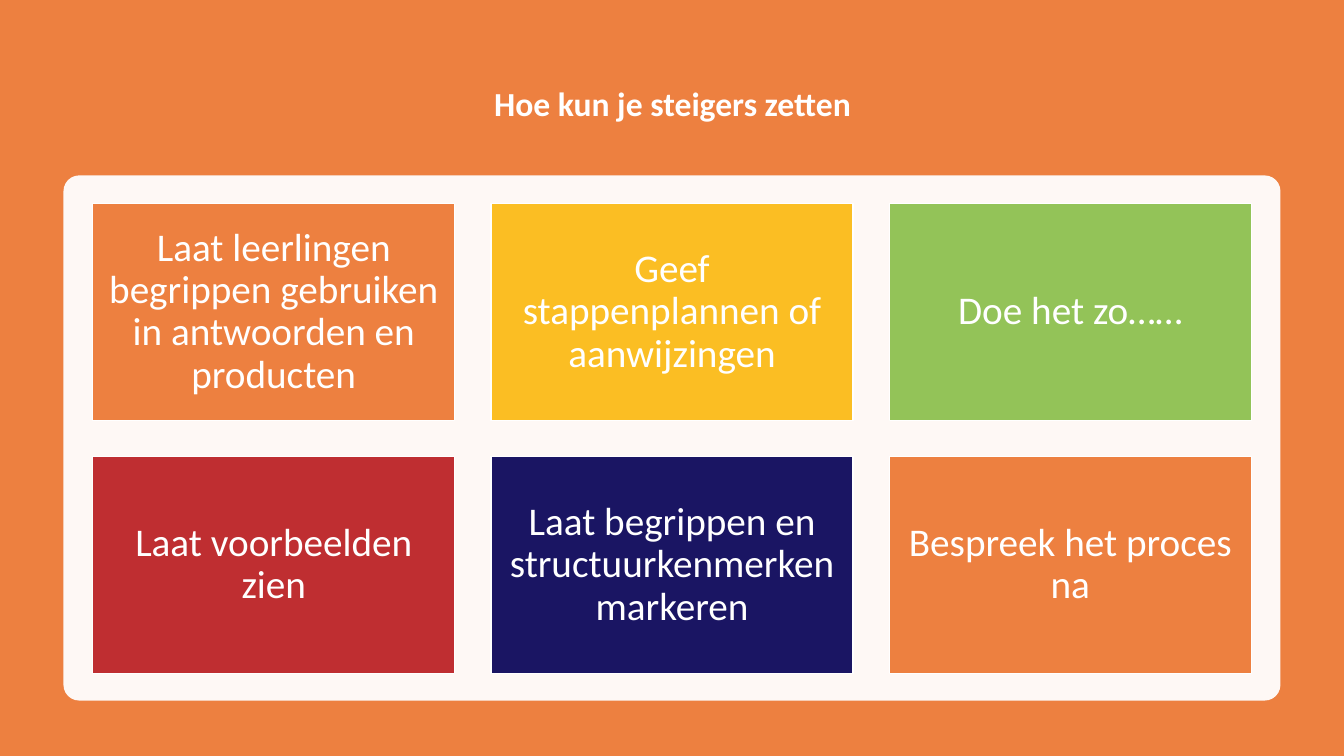
from dataclasses import dataclass

from lxml.etree import SubElement
from pptx import Presentation
from pptx.dml.color import RGBColor
from pptx.enum.shapes import MSO_SHAPE as Preset
from pptx.enum.text import MSO_ANCHOR as Anchor, PP_ALIGN as Align
from pptx.oxml.ns import qn
from pptx.util import Inches, Pt


@dataclass(frozen=True)
class Theme:
    font: str = "Calibri"
    title_size: int = 24
    card_size: int = 28
    white: str = "FFFFFF"
    orange: str = "ED8040"
    yellow: str = "FBBE23"
    green: str = "93C358"
    red: str = "BF2E31"
    navy: str = "1A1563"


THEME = Theme()
SLIDE_SIZE = (13.33, 7.5)
TITLE = "Hoe kun je steigers zetten"
CARDS = [
    ("Laat leerlingen begrippen gebruiken in antwoorden en producten", THEME.orange),
    ("Geef stappenplannen of aanwijzingen", THEME.yellow),
    ("Doe het zo……", THEME.green),
    ("Laat voorbeelden zien", THEME.red),
    ("Laat begrippen en structuurkenmerken markeren", THEME.navy),
    ("Bespreek het proces na", THEME.orange),
]
COLUMNS = 3
GRID_LEFT, GRID_TOP = 0.92, 2.02
CARD_WIDTH, CARD_HEIGHT = 3.59, 2.15
GAP = 0.36


def add_block(slide, preset, box, color, line=None):
    shape = slide.shapes.add_shape(preset, *map(Inches, box))
    shape.shadow.inherit = False
    shape.fill.solid()
    shape.fill.fore_color.rgb = RGBColor.from_string(color)
    if line:
        shape.line.color.rgb = RGBColor.from_string(line)
        shape.line.width = Pt(1)
    else:
        shape.line.fill.background()
    return shape


def write_text(shape, text, size, bold=False, inset=0.1):
    frame = shape.text_frame
    frame.word_wrap = True
    frame.vertical_anchor = Anchor.MIDDLE
    frame.margin_left = frame.margin_right = Inches(inset)
    frame.margin_top = frame.margin_bottom = Inches(inset)
    paragraph = frame.paragraphs[0]
    paragraph.alignment = Align.CENTER
    paragraph.line_spacing = 0.9
    run = paragraph.add_run()
    run.text = text
    run.font.name = THEME.font
    run.font.size = Pt(size)
    run.font.bold = bold
    run.font.color.rgb = RGBColor.from_string(THEME.white)


def set_opacity(shape, percent):
    color = shape.fill._xPr.find(qn("a:solidFill"))[0]
    SubElement(color, qn("a:alpha")).set("val", str(percent * 1000))


def main():
    presentation = Presentation()
    presentation.slide_width, presentation.slide_height = map(Inches, SLIDE_SIZE)
    slide = presentation.slides.add_slide(presentation.slide_layouts[6])

    add_block(slide, Preset.RECTANGLE, (0, 0, *SLIDE_SIZE), THEME.orange)
    title = slide.shapes.add_textbox(*map(Inches, (0.92, 0.5, 11.5, 1.1)))
    write_text(title, TITLE, THEME.title_size, bold=True)

    panel = add_block(slide, Preset.ROUNDED_RECTANGLE, (0.63, 1.74, 12.07, 5.21), THEME.white)
    panel.adjustments[0] = 0.03
    set_opacity(panel, 95)

    for index, (text, color) in enumerate(CARDS):
        row, column = divmod(index, COLUMNS)
        left = GRID_LEFT + column * (CARD_WIDTH + GAP)
        top = GRID_TOP + row * (CARD_HEIGHT + GAP)
        box = (left, top, CARD_WIDTH, CARD_HEIGHT)
        card = add_block(slide, Preset.RECTANGLE, box, color, line=THEME.white)
        write_text(card, text, THEME.card_size, inset=0.12)

    presentation.save("out.pptx")


if __name__ == "__main__":
    main()
